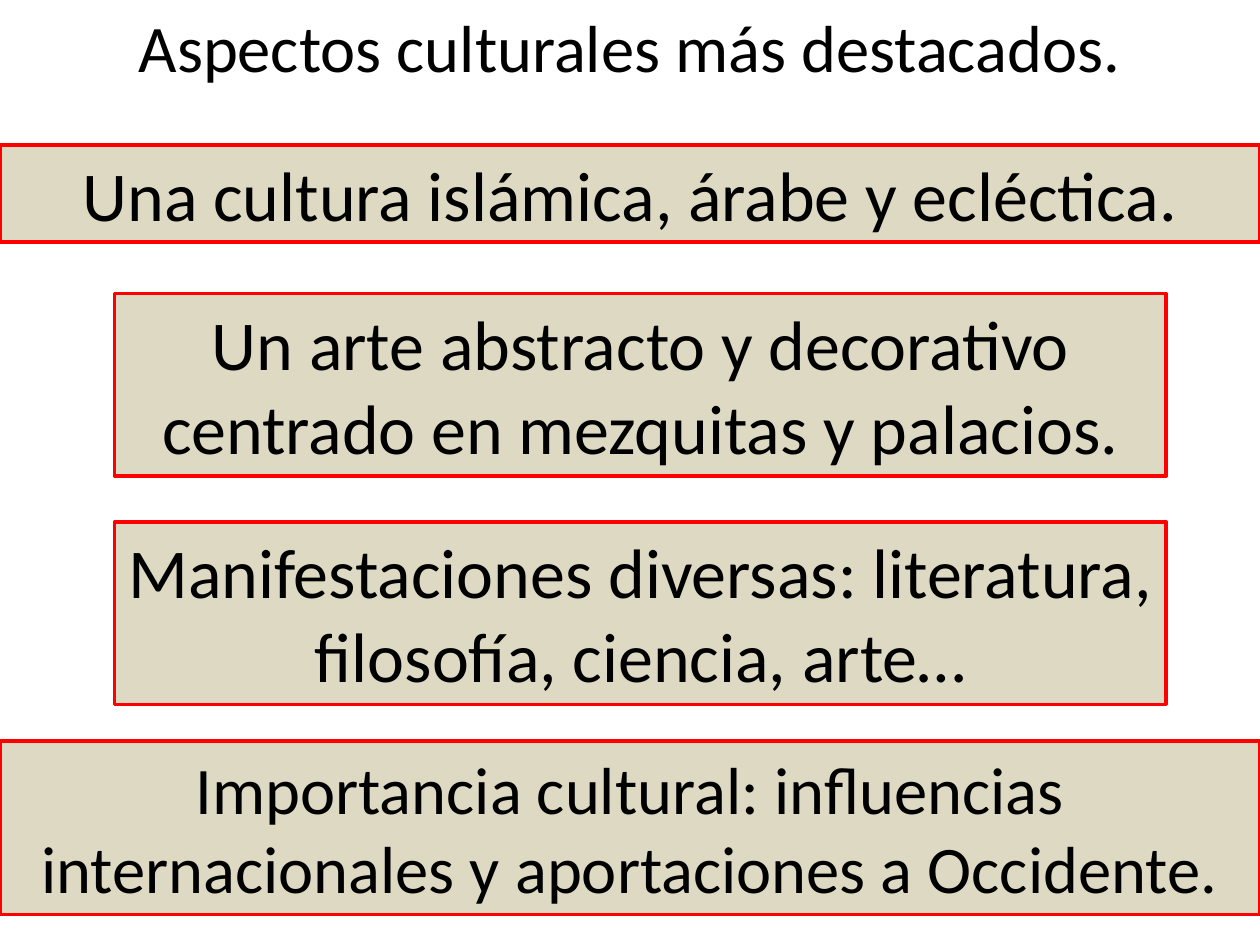
from pptx import Presentation
from pptx.dml.color import RGBColor
from pptx.enum import shapes, text
from pptx.util import Cm, Pt

SLIDE_WIDTH, SLIDE_HEIGHT = 25.4, 19.05
FULL = (0, SLIDE_WIDTH)  # left, width
INSET = (2.31, 21.2)

# Statement, (left, width), top, height, text size
ASPECTS = [
    ("Una cultura islámica, árabe y ecléctica.", FULL, 2.92, 1.96, 40),
    ("Un arte abstracto y decorativo centrado en mezquitas y palacios.",
     INSET, 5.92, 3.68, 40),
    ("Manifestaciones diversas: literatura, filosofía, ciencia, arte…",
     INSET, 10.52, 3.68, 40),
    ("Importancia cultural: influencias internacionales y aportaciones a Occidente.",
     FULL, 14.94, 3.5, 38),
]


def color(hex_string):
    return RGBColor.from_string(hex_string)


def write_centered(frame, wording, size):
    frame.word_wrap = True
    frame.auto_size = text.MSO_AUTO_SIZE.NONE
    frame.vertical_anchor = text.MSO_ANCHOR.TOP
    frame.margin_left = frame.margin_right = Cm(0.25)
    frame.margin_top = frame.margin_bottom = Cm(0.13)
    frame.text = wording
    paragraph = frame.paragraphs[0]
    paragraph.alignment = text.PP_ALIGN.CENTER
    paragraph.font.name = "Calibri"
    paragraph.font.size = Pt(size)
    paragraph.font.color.rgb = color("000000")


def place_heading(slide, left, top, width, height):
    heading = slide.shapes.title
    heading.left, heading.top = Cm(left), Cm(top)
    heading.width, heading.height = Cm(width), Cm(height)
    write_centered(heading.text_frame, "Aspectos culturales más destacados.", 38)


def add_aspect(slide, wording, left, top, width, height, size):
    aspect = slide.shapes.add_shape(
        shapes.MSO_SHAPE.RECTANGLE, Cm(left), Cm(top), Cm(width), Cm(height))
    aspect.shadow.inherit = False
    aspect.fill.solid()
    aspect.fill.fore_color.rgb = color("DDD9C3")
    aspect.line.color.rgb = color("FF0000")
    aspect.line.width = Pt(2)
    write_centered(aspect.text_frame, wording, size)


def main():
    presentation = Presentation()
    presentation.slide_width = Cm(SLIDE_WIDTH)
    presentation.slide_height = Cm(SLIDE_HEIGHT)
    slide = presentation.slides.add_slide(presentation.slide_layouts[5])

    # Heading
    place_heading(slide, 0, 0, SLIDE_WIDTH, 1.88)

    # Framed statements, top to bottom
    for wording, (left, width), top, height, size in ASPECTS:
        add_aspect(slide, wording, left, top, width, height, size)

    presentation.save("out.pptx")


if __name__ == "__main__":
    main()
